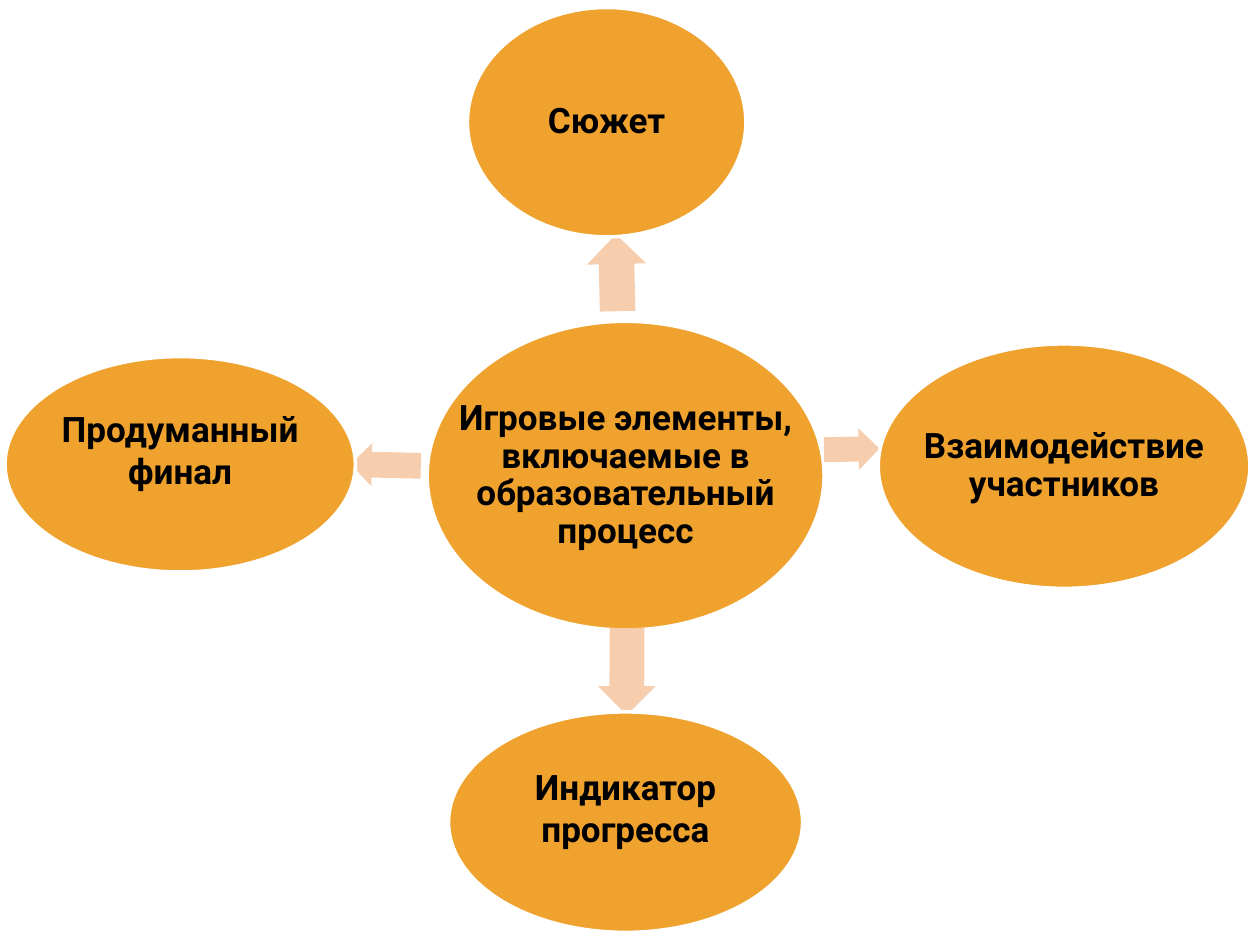
"""Build a radial diagram of game elements used in education."""
from pptx import Presentation
from pptx import util as u
from pptx.dml.color import RGBColor
from pptx.enum import shapes, text

ORANGE = RGBColor(0xF0, 0xA2, 0x2E)
PEACH = RGBColor(0xF6, 0xCE, 0xAD)
WHITE = RGBColor(0xFF, 0xFF, 0xFF)
BLACK = RGBColor(0, 0, 0)

HUB = ("Игровые элементы, включаемые в образовательный процесс",
       (244.08, 183.6, 226.8, 176.4), 0.9, 0)
BRANCHES = [
    ((330.48, 138.96, 43.92, 33.84), 268.7,
     ("Сюжет", (267.12, 4.32, 159.12, 131.04), 0.9, 0)),
    ((470.88, 244.8, 31.68, 23.76), 358.8,
     ("Взаимодействие участников", (501.84, 196.56, 212.4, 139.68), 0.9, 0)),
    ((333.36, 367.2, 49.68, 33.12), 90.1,
     ("Индикатор прогресса", (256.32, 406.8, 202.32, 126), 1, 17)),
    ((200.16, 253.44, 40.32, 24.48), 181.4,
     ("Продуманный финал", (2.88, 203.76, 200.16, 123.12), 1, 17)),
]


def points(bounds):
    """Convert a tuple of numbers to point lengths."""
    return [u.Pt(value) for value in bounds]


def add_filled(page, kind, bounds, color):
    """Add a flat filled shape without outline or shadow."""
    shape = page.shapes.add_shape(kind, *points(bounds))
    shape.shadow.inherit = False
    shape.fill.solid()
    shape.fill.fore_color.rgb = color
    shape.line.fill.background()
    return shape


def add_label(page, label, bounds, spacing, lift):
    """Add a centred bold label, raised by extra bottom margin."""
    frame = page.shapes.add_textbox(*points(bounds)).text_frame
    frame.word_wrap = True
    frame.vertical_anchor = text.MSO_ANCHOR.MIDDLE
    frame.margin_left = frame.margin_right = u.Pt(8)
    frame.margin_top = u.Pt(2)
    frame.margin_bottom = u.Pt(2 + lift)
    para = frame.paragraphs[0]
    para.text = label
    para.alignment = text.PP_ALIGN.CENTER
    para.line_spacing = spacing
    para.font.name = "Roboto"
    para.font.size = u.Pt(20)
    para.font.bold = True
    para.font.color.rgb = BLACK


def add_node(page, label, bounds, spacing, lift):
    """Add a white-edged ellipse with its label."""
    ellipse = add_filled(page, shapes.MSO_SHAPE.OVAL, bounds, ORANGE)
    ellipse.line.color.rgb = WHITE
    ellipse.line.width = u.Pt(2)
    add_label(page, label, bounds, spacing, lift)


def add_arrow(page, bounds, angle):
    """Add a block arrow turned to the given angle."""
    arrow = add_filled(page, shapes.MSO_SHAPE.RIGHT_ARROW, bounds, PEACH)
    arrow.adjustments[0] = 0.6
    arrow.adjustments[1] = 0.5
    arrow.rotation = angle


def main():
    """Assemble the slide and save the deck."""
    deck = Presentation()
    deck.slide_width, deck.slide_height = u.Pt(720), u.Pt(540)
    page = deck.slides.add_slide(deck.slide_layouts[6])
    add_node(page, *HUB)
    for bounds, angle, node in BRANCHES:
        add_arrow(page, bounds, angle)
        add_node(page, *node)
    deck.save("out.pptx")


if __name__ == "__main__":
    main()
